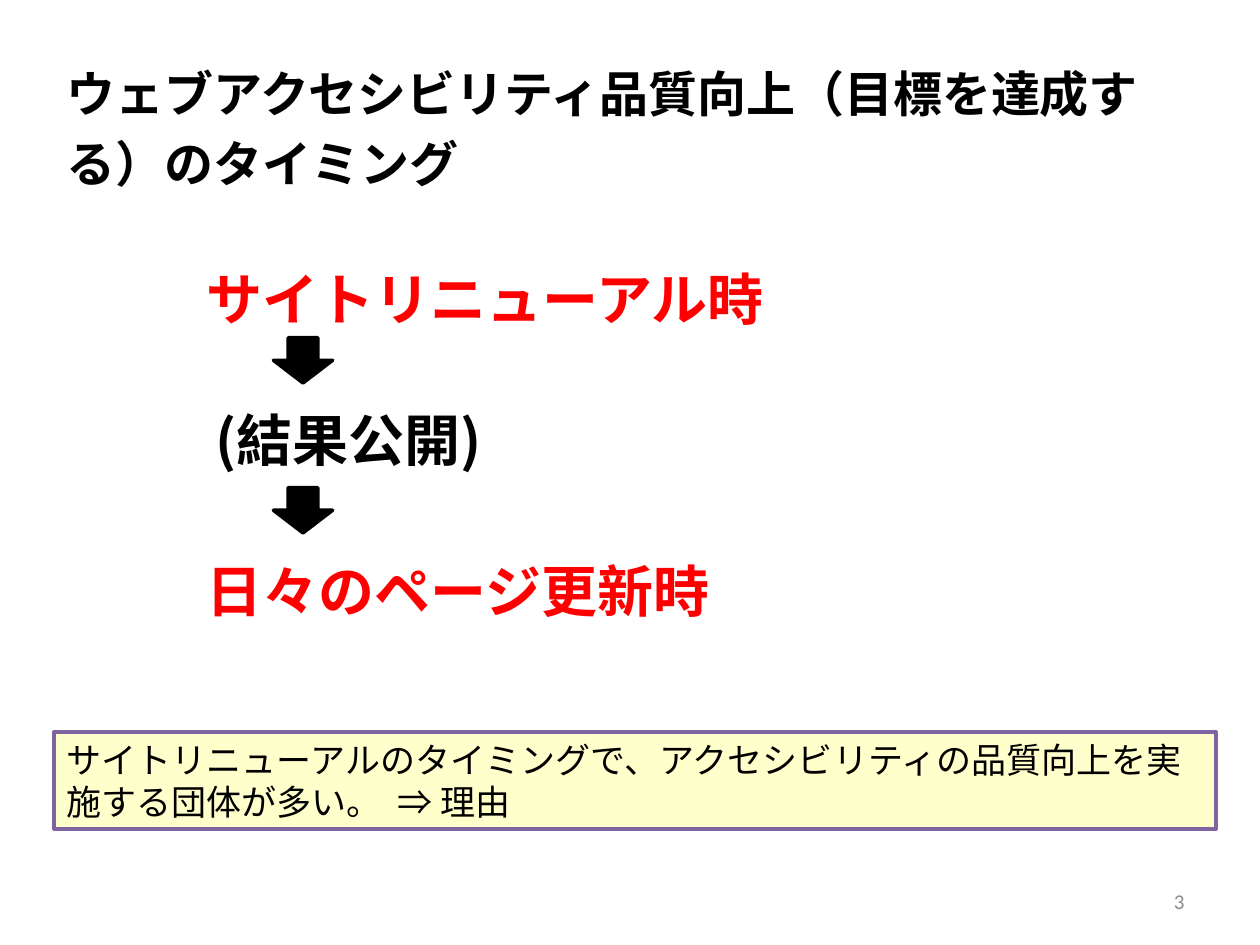
import pptx
import pptx.util
import pptx.dml.color
import pptx.enum.shapes
import pptx.enum.text
import pptx.oxml.ns
import lxml.etree

COLORS = {"black": "000000", "red": "FF0000", "gray": "8C8C8C",
          "cream": "FFFFCC", "purple": "8064A2"}
JP_FONT = "Noto Sans CJK JP"
COLUMNS, ROWS = 100, 75
SLIDE_W, SLIDE_H = pptx.util.Inches(10), pptx.util.Inches(7.5)
ALIGN = pptx.enum.text.PP_ALIGN
ANCHOR = pptx.enum.text.MSO_ANCHOR
SHAPE = pptx.enum.shapes.MSO_SHAPE


def rgb(name):
    return pptx.dml.color.RGBColor.from_string(COLORS[name])


def grid(col, row, cols, rows):
    """Turn grid columns and rows into left, top, width and height."""
    cell_w, cell_h = SLIDE_W / COLUMNS, SLIDE_H / ROWS
    return [round(v) for v in (col * cell_w, row * cell_h, cols * cell_w, rows * cell_h)]


def set_attributes(target, values):
    for name, value in values.items():
        setattr(target, name, value)


def write(sp, text, size, color="black", bold=False, font=JP_FONT,
          align=ALIGN.LEFT, anchor=ANCHOR.TOP, spacing=1.0):
    tf = sp.text_frame
    set_attributes(tf, {"word_wrap": True, "vertical_anchor": anchor,
                        "auto_size": pptx.enum.text.MSO_AUTO_SIZE.NONE})
    p = tf.paragraphs[0]
    set_attributes(p, {"alignment": align, "line_spacing": spacing})
    r = p.add_run()
    r.text = text
    set_attributes(r.font, {"name": font, "size": pptx.util.Pt(size), "bold": bold})
    r.font.color.rgb = rgb(color)
    latin = r.font._element.find(pptx.oxml.ns.qn("a:latin"))
    ea = lxml.etree.Element(pptx.oxml.ns.qn("a:ea"), typeface=font)
    latin.addnext(ea)


def add_title(s, text, box):
    sp = s.shapes.title
    set_attributes(sp, dict(zip(("left", "top", "width", "height"), box)))
    write(sp, text, 28, bold=True, spacing=1.2)


def add_text(s, text, box, **style):
    write(s.shapes.add_textbox(*box), text, **style)


def add_filled(s, kind, box, fill, line):
    sp = s.shapes.add_shape(kind, *box)
    sp.shadow.inherit = False
    sp.fill.solid()
    sp.fill.fore_color.rgb = rgb(fill)
    sp.line.color.rgb = rgb(line)
    sp.line.width = pptx.util.Pt(2)
    return sp


def main():
    prs = pptx.Presentation()
    set_attributes(prs, {"slide_width": SLIDE_W, "slide_height": SLIDE_H})
    s = prs.slides.add_slide(prs.slide_layouts[5])
    add_title(s, "ウェブアクセシビリティ品質向上（目標を達成する）のタイミング",
              grid(4.3, 3.6, 87.4, 11.7))
    add_text(s, "3", grid(71.7, 69.5, 23.3, 4), size=12, color="gray",
             font="Calibri", align=ALIGN.RIGHT, anchor=ANCHOR.MIDDLE)
    steps = [("サイトリニューアル時", 15.4, 19.4, "red"),
             ("(結果公開)", 16.1, 30.6, "black"),
             ("日々のページ更新時", 15.4, 42.6, "red")]
    for text, col, row, color in steps:
        add_text(s, text, grid(col, row, 51.2, 6.7), size=32, color=color,
                 bold=True, spacing=1.2)
    note = add_filled(s, SHAPE.RECTANGLE, grid(4.3, 58.1, 92.2, 7.7), "cream", "purple")
    write(note, "サイトリニューアルのタイミングで、アクセシビリティの品質向上を実施する団体が多い。  ⇒ 理由", 20)
    for row in (26.8, 38.7):
        add_filled(s, SHAPE.DOWN_ARROW, grid(21.7, row, 4.7, 3.6), "black", "black")
    prs.save("out.pptx")


if __name__ == "__main__":
    main()
